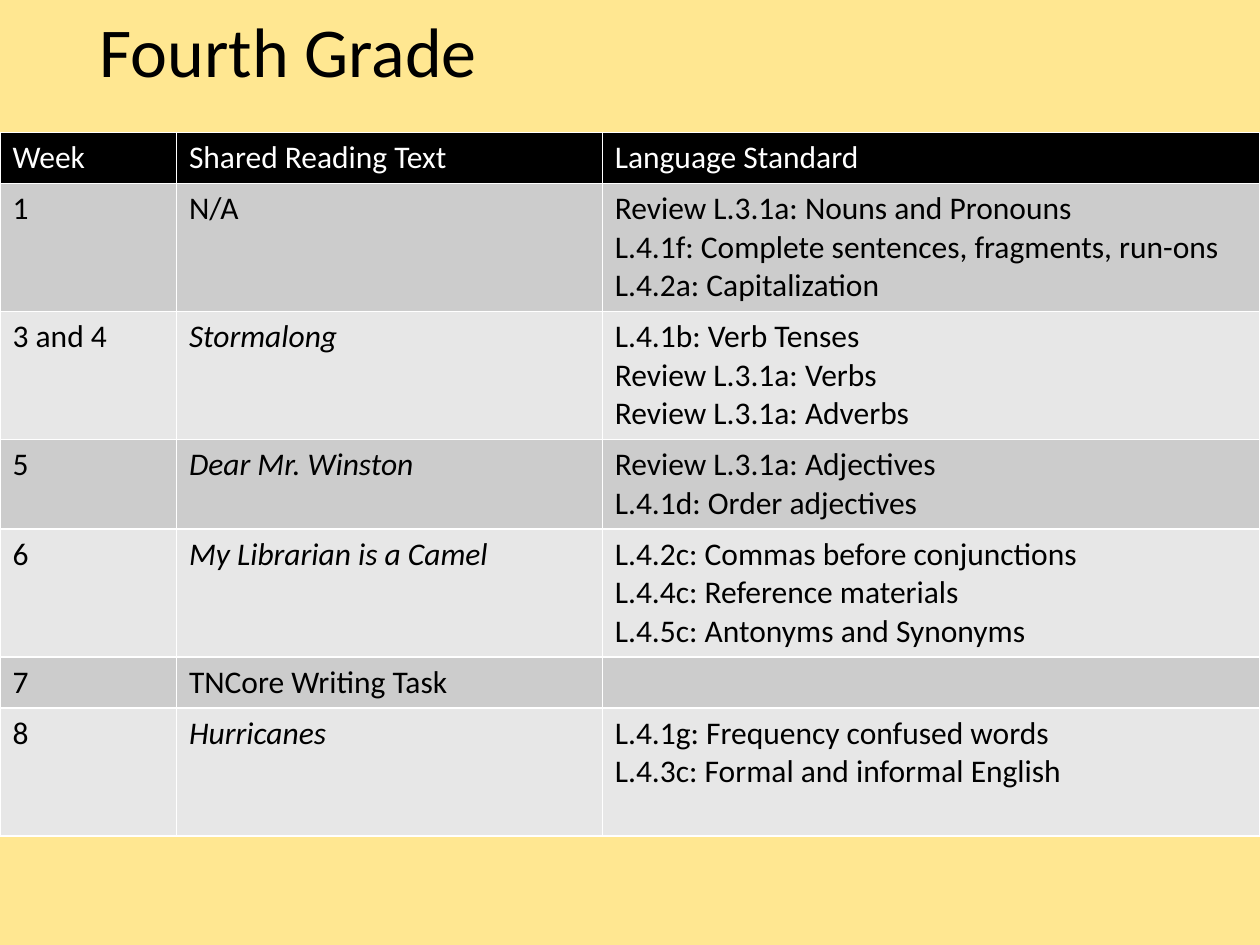
from lxml import etree
from pptx import Presentation
from pptx.dml.color import RGBColor
from pptx.enum import text
from pptx.oxml import ns
from pptx.util import Inches, Pt

COLORS = {
    "background": "FFE791",
    "header": "000000",
    "odd": "CCCCCC",
    "even": "E7E7E7",
    "rule": "FFFFFF",
    "light": "FFFFFF",
    "dark": "000000",
}
COLUMN_WIDTHS = [1.4, 3.38, 5.22]
LINE_HEIGHT = 0.305
CELL_PADDING = 0.1
HEADINGS = ["Week", "Shared Reading Text", "Language Standard"]
WEEKS = [
    ("1", "N/A", False, 3, [
        "Review L.3.1a: Nouns and Pronouns",
        "L.4.1f: Complete sentences, fragments, run-ons",
        "L.4.2a: Capitalization"]),
    ("3 and 4", "Stormalong", True, 3, [
        "L.4.1b: Verb Tenses",
        "Review L.3.1a: Verbs",
        "Review L.3.1a: Adverbs"]),
    ("5", "Dear Mr. Winston", True, 2, [
        "Review L.3.1a: Adjectives",
        "L.4.1d: Order adjectives"]),
    ("6", "My Librarian is a Camel", True, 3, [
        "L.4.2c: Commas before conjunctions",
        "L.4.4c: Reference materials",
        "L.4.5c: Antonyms and Synonyms"]),
    ("7", "TNCore Writing Task", False, 1, []),
    ("8", "Hurricanes", True, 3, [
        "L.4.1g: Frequency confused words",
        "L.4.3c: Formal and informal English"]),
]


def rgb(name):
    return RGBColor.from_string(COLORS[name])


def format_font(font, color, **values):
    for key, value in {"name": "Calibri", "bold": False, **values}.items():
        setattr(font, key, value)
    font.color.rgb = rgb(color)


def rule_cell(cell):
    properties = cell._tc.get_or_add_tcPr()
    for position, side in enumerate(("lnL", "lnR", "lnT", "lnB")):
        line = etree.Element(ns.qn(f"a:{side}"), w=str(Pt(1)))
        fill = etree.SubElement(line, ns.qn("a:solidFill"))
        etree.SubElement(fill, ns.qn("a:srgbClr"), val=COLORS["rule"])
        properties.insert(position, line)


def fill_cell(cell, lines, fill, color, italic=False):
    cell.fill.solid()
    cell.fill.fore_color.rgb = rgb(fill)
    rule_cell(cell)
    cell.text = "\n".join(lines)
    for paragraph in cell.text_frame.paragraphs:
        format_font(paragraph.font, color, size=Pt(18), italic=italic)


def place_title(slide, left, top, width, height):
    title = slide.shapes.title
    box = {"left": left, "top": top, "width": width, "height": height}
    for key, value in box.items():
        setattr(title, key, Inches(value))
    title.text = "Fourth Grade"
    frame = title.text_frame
    frame_format = {
        "word_wrap": True,
        "auto_size": text.MSO_AUTO_SIZE.NONE,
        "vertical_anchor": text.MSO_ANCHOR.MIDDLE,
    }
    for key, value in frame_format.items():
        setattr(frame, key, value)
    heading = frame.paragraphs[0]
    heading.alignment = text.PP_ALIGN.LEFT
    format_font(heading.font, "dark", size=Pt(40))


def place_schedule(slide, left, top, width):
    line_counts = [1] + [week[3] for week in WEEKS]
    heights = [CELL_PADDING + LINE_HEIGHT * count for count in line_counts]
    schedule = slide.shapes.add_table(
        len(heights), len(HEADINGS), Inches(left), Inches(top),
        Inches(width), Inches(sum(heights))).table
    for column, share in zip(schedule.columns, COLUMN_WIDTHS):
        column.width = Inches(width * share / sum(COLUMN_WIDTHS))
    for row, height in zip(schedule.rows, heights):
        row.height = Inches(height)
    for column, heading in enumerate(HEADINGS):
        fill_cell(schedule.cell(0, column), [heading], "header", "light")
    for row, (week, reading, italic, _, standards) in enumerate(WEEKS, 1):
        band = "odd" if row % 2 else "even"
        fill_cell(schedule.cell(row, 0), [week], band, "dark")
        fill_cell(schedule.cell(row, 1), [reading], band, "dark", italic)
        fill_cell(schedule.cell(row, 2), standards, band, "dark")


def main():
    deck = Presentation()
    deck.slide_width, deck.slide_height = Inches(10), Inches(7.5)
    slide = deck.slides.add_slide(deck.slide_layouts[5])
    slide.background.fill.solid()
    slide.background.fill.fore_color.rgb = rgb("background")
    place_schedule(slide, 0, 1.05, 10)
    place_title(slide, 0.69, 0.01, 8.62, 0.77)
    deck.save("out.pptx")


if __name__ == "__main__":
    main()
